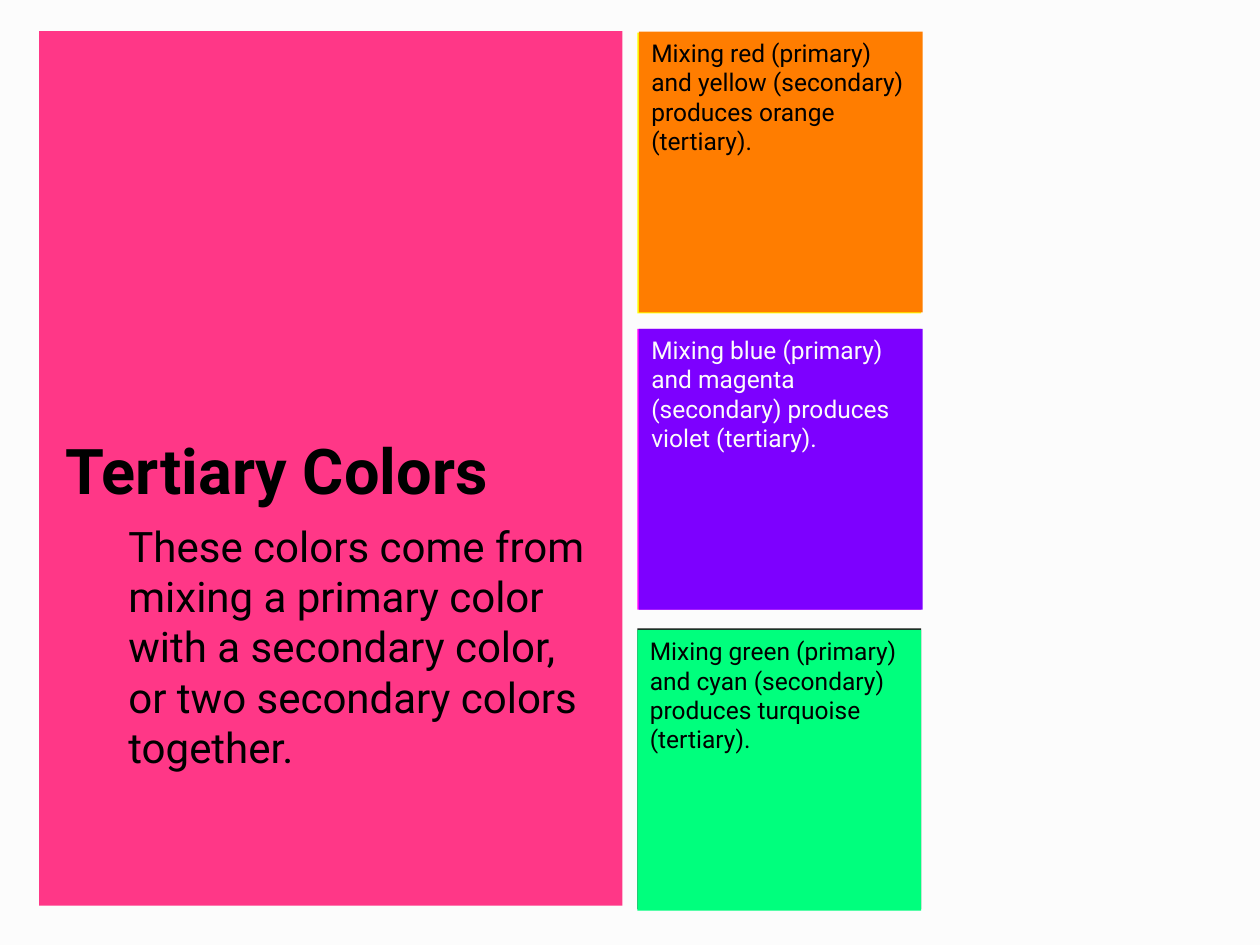
from pptx import Presentation
from pptx.dml.color import RGBColor
from pptx.enum.shapes import MSO_SHAPE
from pptx.enum.text import MSO_ANCHOR, MSO_AUTO_SIZE, PP_ALIGN
from pptx.util import Cm, Pt

RECT = MSO_SHAPE.RECTANGLE
TOP, BOTTOM = MSO_ANCHOR.TOP, MSO_ANCHOR.BOTTOM
LEFT = PP_ALIGN.LEFT
NO_AUTOFIT = MSO_AUTO_SIZE.NONE

COLORS = {
    "paper": "FCFCFC", "ink": "000000", "pink": "FF3787",
    "yellow": "FFFF00", "magenta": "FF00FF", "charcoal": "191919",
    "orange": "FF7D00", "violet": "7D00FF", "turquoise": "00FF7D",
}


def add_block(left, top, width, height, color):
    block = slide.shapes.add_shape(RECT, Cm(left), Cm(top), Cm(width), Cm(height))
    block.shadow.inherit = False
    block.fill.solid()
    block.fill.fore_color.rgb = RGBColor.from_string(COLORS[color])
    block.line.fill.background()
    return block


def write(shape, text, size, color, anchor=TOP, bold=False):
    frame = shape.text_frame
    frame.word_wrap = True
    frame.auto_size = NO_AUTOFIT
    frame.vertical_anchor = anchor
    paragraph = frame.paragraphs[0]
    paragraph.alignment = LEFT
    run = paragraph.add_run()
    run.text = text
    run.font.name = "Roboto"
    run.font.size = Pt(size)
    run.font.bold = bold
    run.font.color.rgb = RGBColor.from_string(COLORS[color])


prs = Presentation()
prs.slide_width, prs.slide_height = Cm(25.4), Cm(19.05)
slide = prs.slides.add_slide(prs.slide_layouts[5])
slide.background.fill.solid()
slide.background.fill.fore_color.rgb = RGBColor.from_string(COLORS["paper"])

# Pink panel, placed behind the title
panel = add_block(0.79, 0.63, 11.76, 17.63, "pink")
title = slide.shapes.title
title._element.addprevious(panel._element)

# Title and explanation
title.left, title.top, title.width, title.height = Cm(1.07), Cm(7.14), Cm(11.15), Cm(3.22)
write(title, "Tertiary Colors", 36, "ink", BOTTOM, bold=True)

explanation = slide.shapes.add_textbox(Cm(1.07), Cm(10.36), Cm(11.15), Cm(6.65))
explanation.text_frame.margin_left = Cm(0.25 + 1.27)
write(explanation, "These colors come from mixing a primary color with a secondary color, "
      "or two secondary colors together.", 24, "ink")

# Mixing tiles: each has a backing square that shows as a thin edge
TILE_WIDTH, TILE_HEIGHT = 5.72, 5.66
BACKING_LEFT = 12.85
tiles = [
    # backing, backing top, tile colour, tile left, tile top, text colour, text
    ("yellow", 0.66, "orange", 12.88, 0.64, "ink",
     "Mixing red (primary) and yellow (secondary) produces orange (tertiary)."),
    ("magenta", 6.63, "violet", 12.88, 6.63, "paper",
     "Mixing blue (primary) and magenta (secondary) produces violet (tertiary)."),
    ("charcoal", 12.67, "turquoise", 12.85, 12.7, "ink",
     "Mixing green (primary) and cyan (secondary) produces turquoise (tertiary)."),
]
for backing, backing_top, mix, mix_left, mix_top, text_color, recipe in tiles:
    add_block(BACKING_LEFT, backing_top, TILE_WIDTH, TILE_HEIGHT, backing)
    tile = add_block(mix_left, mix_top, TILE_WIDTH, TILE_HEIGHT, mix)
    write(tile, recipe, 14, text_color)

prs.save("out.pptx")
